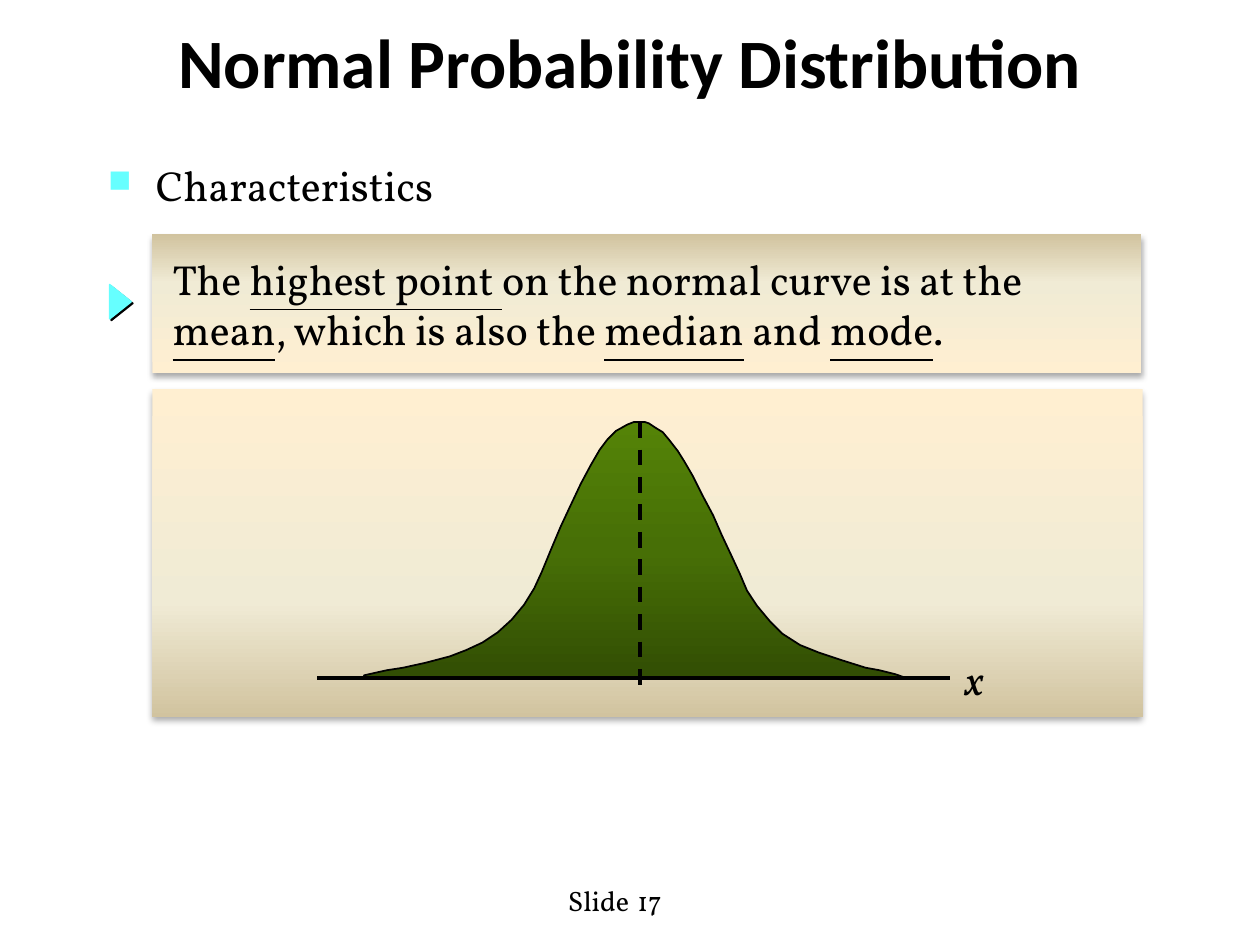
from lxml import etree
from pptx import Presentation
from pptx.dml.color import RGBColor
from pptx.enum.dml import MSO_LINE
from pptx.enum.shapes import MSO_CONNECTOR, MSO_SHAPE
from pptx.enum.text import MSO_ANCHOR, PP_ALIGN
from pptx.oxml.ns import qn
from pptx.util import Inches, Pt

RECTANGLE = MSO_SHAPE.RECTANGLE
TRIANGLE = MSO_SHAPE.ISOSCELES_TRIANGLE
STRAIGHT = MSO_CONNECTOR.STRAIGHT
DASH = MSO_LINE.DASH
MIDDLE, TOP = MSO_ANCHOR.MIDDLE, MSO_ANCHOR.TOP
LEFT, CENTER = PP_ALIGN.LEFT, PP_ALIGN.CENTER

BLACK = RGBColor(0x00, 0x00, 0x00)
CYAN = RGBColor(0x66, 0xFF, 0xFF)
CREAM = RGBColor(0xFF, 0xEF, 0xD1)
IVORY = RGBColor(0xF0, 0xEB, 0xD5)
TAN = RGBColor(0xD1, 0xC3, 0x9F)
DARK_GREEN = RGBColor(0x32, 0x4E, 0x04)
MID_GREEN = RGBColor(0x47, 0x6F, 0x06)
GREEN = RGBColor(0x54, 0x83, 0x07)

PANEL_STOPS = [(0, CREAM), (65, IVORY), (100, TAN)]
CURVE_STOPS = [(0, DARK_GREEN), (50, MID_GREEN), (100, GREEN)]
UPWARD, DOWNWARD = 90, 270

# Distance from the mean and height above the axis, in inches.
LEFT_SIDE = [
    (2.18, 0.02), (2.0, 0.06), (1.87, 0.08), (1.69, 0.12), (1.5, 0.17),
    (1.37, 0.22), (1.24, 0.28), (1.12, 0.36), (1.01, 0.46), (0.91, 0.58),
    (0.83, 0.71), (0.77, 0.84), (0.7, 1.01), (0.62, 1.2), (0.55, 1.35),
    (0.46, 1.54), (0.38, 1.69), (0.31, 1.81), (0.25, 1.89), (0.18, 1.96),
    (0.09, 2.01), (0.04, 2.03),
]
RIGHT_SIDE = [
    (0.05, 2.03), (0.08, 2.02), (0.14, 1.98), (0.19, 1.95), (0.24, 1.89),
    (0.31, 1.8), (0.36, 1.72), (0.43, 1.6), (0.51, 1.44), (0.59, 1.29),
    (0.66, 1.13), (0.74, 0.96), (0.8, 0.83), (0.86, 0.69), (0.94, 0.57),
    (1.04, 0.45), (1.14, 0.35), (1.28, 0.26), (1.43, 0.2), (1.61, 0.14),
    (1.8, 0.08), (1.91, 0.06), (2.03, 0.03), (2.12, 0),
]


def add_color(parent, color):
    return etree.SubElement(parent, qn("a:srgbClr"), val=str(color))


def set_gradient(shape, stops, angle):
    shape.fill.gradient()
    shape.fill.gradient_angle = angle
    stop_list = next(shape._element.iter(qn("a:gsLst")))
    for stop in list(stop_list):
        stop_list.remove(stop)
    for position, color in stops:
        stop = etree.SubElement(stop_list, qn("a:gs"), pos=str(position * 1000))
        add_color(stop, color)


def set_shadow(shape, blur, distance, direction, opacity):
    shape.shadow.inherit = False
    effects = shape._element.spPr.find(qn("a:effectLst"))
    shadow = etree.SubElement(
        effects, qn("a:outerShdw"), blurRad=str(Pt(blur)), dist=str(Pt(distance)),
        dir=str(direction * 60000), algn="tl", rotWithShape="0")
    color = add_color(shadow, BLACK)
    etree.SubElement(color, qn("a:alpha"), val=str(opacity * 1000))


def add_run(paragraph, text, size=24, font="Vollkorn", bold=False, italic=False,
            underline=False):
    run = paragraph.add_run()
    run.text = text
    run.font.size = Pt(size)
    run.font.name = font
    run.font.bold = bold
    run.font.italic = italic
    run.font.underline = underline
    run.font.color.rgb = BLACK


def add_text(slide, text, left, top, width, height, align=LEFT, anchor=TOP, **font):
    box = slide.shapes.add_textbox(
        Inches(left), Inches(top), Inches(width), Inches(height))
    box.text_frame.word_wrap = True
    box.text_frame.vertical_anchor = anchor
    paragraph = box.text_frame.paragraphs[0]
    paragraph.alignment = align
    add_run(paragraph, text, **font)
    return paragraph


def add_panel(slide, left, top, width, height, angle):
    panel = slide.shapes.add_shape(
        RECTANGLE, Inches(left), Inches(top), Inches(width), Inches(height))
    set_gradient(panel, PANEL_STOPS, angle)
    panel.line.fill.background()
    set_shadow(panel, blur=3.5, distance=2.2, direction=90, opacity=32)
    return panel


def add_line(slide, start, end, dash=None):
    line = slide.shapes.add_connector(STRAIGHT, *map(Inches, start + end))
    line.line.color.rgb = BLACK
    line.line.width = Pt(2.25)
    if dash is not None:
        line.line.dash_style = dash
    etree.SubElement(line._element.spPr, qn("a:effectLst"))


def add_title(slide, left, top, width, height):
    title = slide.shapes.title
    title.left, title.top = Inches(left), Inches(top)
    title.width, title.height = Inches(width), Inches(height)
    title.text_frame.vertical_anchor = MIDDLE
    paragraph = title.text_frame.paragraphs[0]
    paragraph.alignment = CENTER
    add_run(paragraph, "Normal Probability Distribution", size=39.6,
            font="Calibri", bold=True)


def add_heading(slide, left, top, width, height):
    paragraph = add_text(slide, "Characteristics", left, top, width, height)
    paragraph.space_before = Pt(4.8)
    properties = paragraph._p.get_or_add_pPr()
    properties.set("marL", str(Inches(0.38)))
    properties.set("indent", str(-Inches(0.38)))
    add_color(etree.SubElement(properties, qn("a:buClr")), CYAN)
    etree.SubElement(properties, qn("a:buSzPct"), val="75000")
    etree.SubElement(properties, qn("a:buChar"), char="■")


def add_statement(slide, left, top, width, height):
    panel = add_panel(slide, left, top, width, height, UPWARD)
    frame = panel.text_frame
    frame.word_wrap = True
    frame.vertical_anchor = MIDDLE
    frame.margin_left = Inches(0.16)
    lines = [
        [("The ", False), ("highest point ", True),
         ("on the normal curve is at the", False)],
        [("mean", True), (", which is also the ", False), ("median", True),
         (" and ", False), ("mode", True), (".", False)],
    ]
    for index, parts in enumerate(lines):
        paragraph = frame.add_paragraph() if index else frame.paragraphs[0]
        paragraph.alignment = LEFT
        for text, underline in parts:
            add_run(paragraph, text, underline=underline)

    marker = slide.shapes.add_shape(
        TRIANGLE, Inches(left - 0.39), Inches(top + 0.45), Inches(0.27), Inches(0.17))
    marker.rotation = 90
    marker.fill.solid()
    marker.fill.fore_color.rgb = CYAN
    marker.line.color.rgb = CYAN
    marker.line.width = Pt(1)
    set_shadow(marker, blur=0, distance=1.4, direction=45, opacity=100)


def add_curve(slide, left, top, width, height):
    add_panel(slide, left, top, width, height, DOWNWARD)
    mean, base = left + 3.86, top + 2.29
    offsets = [(-distance, rise) for distance, rise in LEFT_SIDE] + RIGHT_SIDE
    points = [(Inches(mean + x), Inches(base - rise)) for x, rise in offsets]
    start = (Inches(mean - LEFT_SIDE[0][0]), Inches(base))
    builder = slide.shapes.build_freeform(*start)
    builder.add_line_segments(points, close=True)
    curve = builder.convert_to_shape()
    set_gradient(curve, CURVE_STOPS, UPWARD)
    curve.line.color.rgb = BLACK
    curve.line.width = Pt(1)
    curve.shadow.inherit = False

    add_line(slide, (mean + 0.01, base - 2.03), (mean + 0.01, base + 0.1), DASH)
    add_line(slide, (left + 1.31, base), (left + 6.33, base))
    add_text(slide, "x", left + 6.34, top + 2.05, 0.37, 0.5, align=CENTER, italic=True)


def add_footer(slide, left, top, width, height):
    add_text(slide, "Slide", left, top, width, height, size=16)
    add_text(slide, "17", left + 0.55, top, width, height, size=16)


def main():
    presentation = Presentation()
    presentation.slide_width, presentation.slide_height = Inches(10), Inches(7.5)
    slide = presentation.slides.add_slide(presentation.slide_layouts[5])
    add_footer(slide, 4.41, 6.96, 0.7, 0.37)
    add_title(slide, 0.75, 0.11, 8.5, 0.75)
    add_heading(slide, 0.76, 1.22, 3.83, 0.57)
    add_statement(slide, 1.21, 1.86, 7.85, 1.1)
    add_curve(slide, 1.21, 3.09, 7.86, 2.6)
    presentation.save("out.pptx")


if __name__ == "__main__":
    main()
